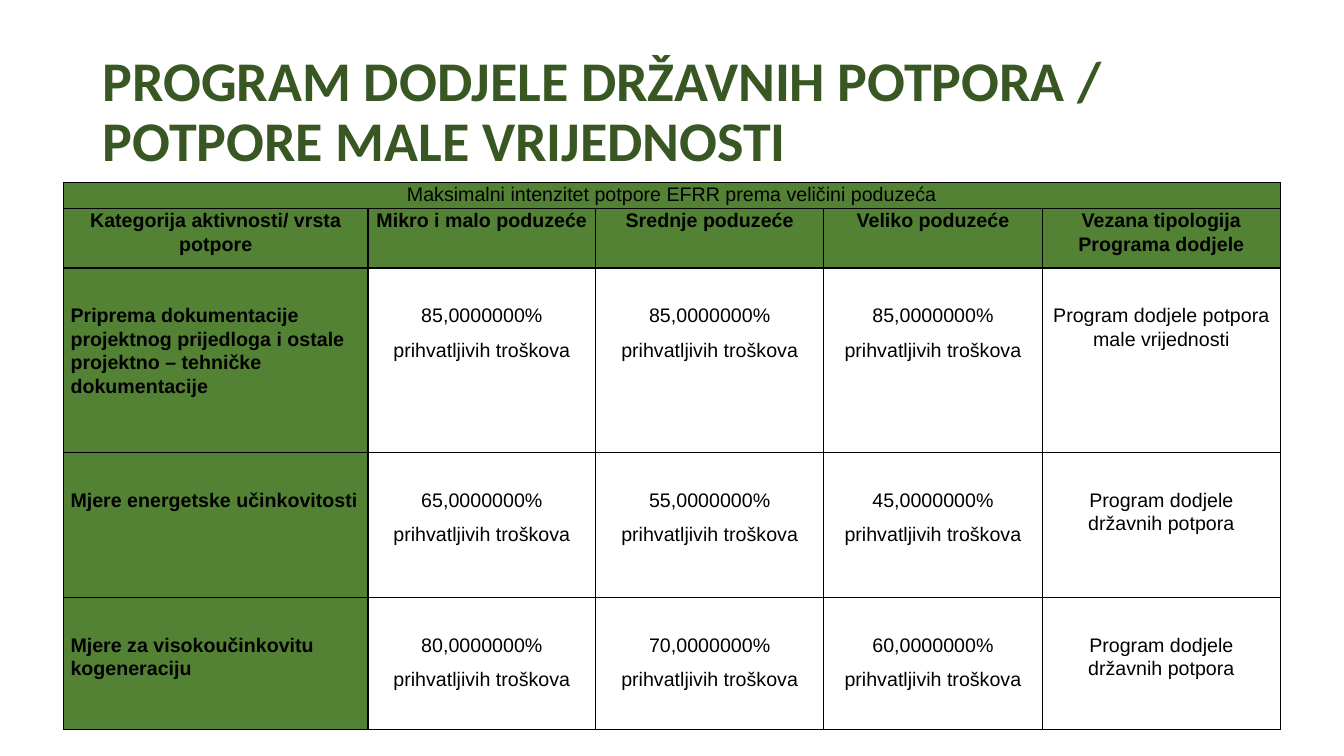
import dataclasses

import lxml.etree
import pptx
import pptx.dml.color
import pptx.enum.text
import pptx.oxml.ns
import pptx.util

Inches = pptx.util.Inches
Pt = pptx.util.Pt
Align = pptx.enum.text.PP_ALIGN
Anchor = pptx.enum.text.MSO_ANCHOR

TITLE_GREEN = "385723"
TABLE_GREEN = "548235"
BLACK = "000000"

COLUMN_WIDTHS = [3.02, 2.26, 2.26, 2.17, 2.36]
ROW_HEIGHTS = [0.26, 0.59, 1.83, 1.44, 1.31]
BODY_TOP = 0.35

TABLE_TITLE = "Maksimalni intenzitet potpore EFRR prema veličini poduzeća"
HEADINGS = [
    "Kategorija aktivnosti/ vrsta potpore",
    "Mikro i malo poduzeće",
    "Srednje poduzeće",
    "Veliko poduzeće",
    "Vezana tipologija Programa dodjele",
]


@dataclasses.dataclass
class Activity:
    name: str
    rates: tuple[int, int, int]
    programme: str


ACTIVITIES = [
    Activity(
        "Priprema dokumentacije projektnog prijedloga i ostale projektno – tehničke dokumentacije",
        (85, 85, 85),
        "Program dodjele potpora male vrijednosti",
    ),
    Activity("Mjere energetske učinkovitosti", (65, 55, 45), "Program dodjele državnih potpora"),
    Activity("Mjere za visokoučinkovitu kogeneraciju", (80, 70, 60), "Program dodjele državnih potpora"),
]


@dataclasses.dataclass
class CellStyle:
    bold: bool = False
    fill: str | None = None
    align: Align = Align.CENTER
    top: float = 0


CAPTION = CellStyle(fill=TABLE_GREEN)
HEADING = CellStyle(bold=True, fill=TABLE_GREEN)
ACTIVITY = CellStyle(bold=True, fill=TABLE_GREEN, align=Align.LEFT, top=BODY_TOP)
BODY = CellStyle(top=BODY_TOP)


def colour(value: str) -> pptx.dml.color.RGBColor:
    return pptx.dml.color.RGBColor.from_string(value)


def format_font(font, name: str, size: float, color: str, bold: bool) -> None:
    font.name = name
    font.size = Pt(size)
    font.bold = bold
    font.color.rgb = colour(color)


def add_borders(cell) -> None:
    """Draw a thin black line on all four sides; call before setting the fill."""
    qn = pptx.oxml.ns.qn
    properties = cell._tc.get_or_add_tcPr()
    for side in ("lnL", "lnR", "lnT", "lnB"):
        line = lxml.etree.SubElement(properties, qn(f"a:{side}"), w=str(Pt(1)))
        solid = lxml.etree.SubElement(line, qn("a:solidFill"))
        lxml.etree.SubElement(solid, qn("a:srgbClr"), val=BLACK)


def fill_cell(cell, text: str, style: CellStyle) -> None:
    add_borders(cell)
    if style.fill:
        cell.fill.solid()
        cell.fill.fore_color.rgb = colour(style.fill)
    else:
        cell.fill.background()
    cell.margin_left = cell.margin_right = Inches(0.07)
    cell.margin_top = Inches(style.top)
    cell.margin_bottom = 0
    cell.vertical_anchor = Anchor.TOP
    cell.text_frame.text = text
    for para in cell.text_frame.paragraphs:
        para.alignment = style.align
        para.line_spacing = 1.07
        para.space_after = Pt(8)
        format_font(para.font, "Arial", 14, BLACK, style.bold)
        for span in para.runs:
            format_font(span.font, "Arial", 14, BLACK, style.bold)


def add_title(page) -> None:
    title = page.shapes.title
    title.left, title.top = Inches(0.92), Inches(0.4)
    title.width, title.height = Inches(11.5), Inches(1.45)
    frame = title.text_frame
    frame.text = "PROGRAM DODJELE DRŽAVNIH POTPORA / POTPORE MALE VRIJEDNOSTI"
    frame.word_wrap = True
    frame.auto_size = pptx.enum.text.MSO_AUTO_SIZE.NONE
    frame.vertical_anchor = Anchor.MIDDLE
    para = frame.paragraphs[0]
    para.alignment = Align.LEFT
    para.line_spacing = 0.9
    format_font(para.runs[0].font, "Calibri", 40, TITLE_GREEN, True)


def add_aid_table(page) -> None:
    table = page.shapes.add_table(
        len(ROW_HEIGHTS), len(COLUMN_WIDTHS), Inches(0.63), Inches(1.81),
        Inches(sum(COLUMN_WIDTHS)), Inches(sum(ROW_HEIGHTS)),
    ).table
    table.first_row = table.horz_banding = False
    for column, width in zip(table.columns, COLUMN_WIDTHS):
        column.width = Inches(width)
    for row, height in zip(table.rows, ROW_HEIGHTS):
        row.height = Inches(height)

    last = len(COLUMN_WIDTHS) - 1
    table.cell(0, 0).merge(table.cell(0, last))
    for index, heading in enumerate(HEADINGS):
        fill_cell(table.cell(0, index), "" if index else TABLE_TITLE, CAPTION)
        fill_cell(table.cell(1, index), heading, HEADING)
    for row_index, activity in enumerate(ACTIVITIES, start=2):
        fill_cell(table.cell(row_index, 0), activity.name, ACTIVITY)
        for column_index, rate in enumerate(activity.rates, start=1):
            share = f"{rate},0000000%\nprihvatljivih troškova"
            fill_cell(table.cell(row_index, column_index), share, BODY)
        fill_cell(table.cell(row_index, last), activity.programme, BODY)


def main() -> None:
    deck = pptx.Presentation()
    deck.slide_width, deck.slide_height = Inches(13.33), Inches(7.5)
    page = deck.slides.add_slide(deck.slide_layouts[5])
    add_title(page)
    add_aid_table(page)
    deck.save("out.pptx")


if __name__ == "__main__":
    main()
